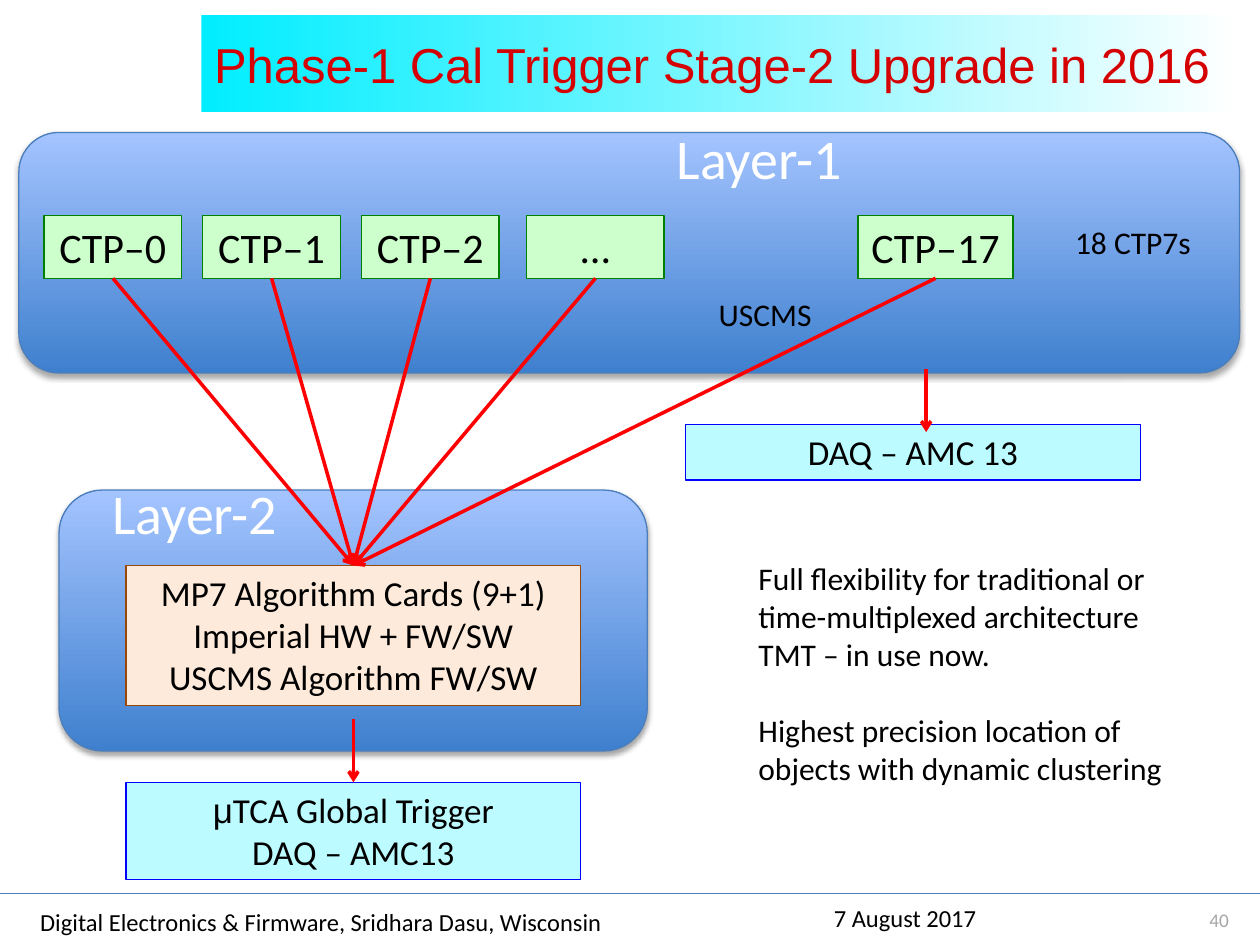
from dataclasses import dataclass

from lxml.etree import SubElement
from pptx import Presentation
from pptx.dml.color import RGBColor
from pptx.enum.shapes import MSO_CONNECTOR as Connector, MSO_SHAPE as Shape
from pptx.enum.text import MSO_ANCHOR as Anchor, PP_ALIGN as Align
from pptx.oxml.ns import qn
from pptx.util import Cm, Pt

TOP, BOTTOM = 0, 2


@dataclass(frozen=True)
class Theme:
    font: str = "Calibri"
    title_font: str = "Arial"
    text: str = "000000"
    white: str = "FFFFFF"
    muted: str = "A6A6A6"
    title: str = "D50001"
    title_gradient: tuple = ("00EEFF", "FFFFFF")
    panel_gradient: tuple = ("3F80CE", "A4C4FF")
    panel_line: str = "4B7EBC"
    rule: str = "4F81BD"
    arrow: str = "FE0001"
    # Box styles: fill, line
    card: tuple = ("CCFFCC", "008000")
    algorithm: tuple = ("FDEADA", "984807")
    output: tuple = ("BCFBFF", "0000FF")
    title_size: int = 28
    layer_size: int = 32
    card_size: int = 24
    box_size: int = 20
    note_size: int = 18
    footer_size: int = 14
    number_size: int = 11


def color(value):
    return RGBColor.from_string(value)


class SlideBuilder:
    def __init__(self, slide, theme):
        self.slide = slide
        self.theme = theme

    def add_text(self, frame, lines, size, ink=None, font=None,
                 align=Align.LEFT, anchor=Anchor.TOP, gaps=None):
        """Each line is a string or a list of (text, font) runs."""
        frame.word_wrap = True
        frame.vertical_anchor = anchor
        for index, line in enumerate(lines):
            paragraph = frame.paragraphs[0] if index == 0 else frame.add_paragraph()
            paragraph.alignment = align
            if gaps and index in gaps:
                paragraph.space_before = Pt(gaps[index])
            runs = [(line, font)] if isinstance(line, str) else line
            for text, run_font in runs:
                run = paragraph.add_run()
                run.text = text
                run.font.name = run_font or self.theme.font
                run.font.size = Pt(size)
                run.font.color.rgb = color(ink or self.theme.text)

    def gradient(self, shape, colors, angle):
        shape.fill.gradient()
        shape.fill.gradient_angle = angle
        for stop, value in zip(shape.fill.gradient_stops, colors):
            stop.color.rgb = color(value)

    def title(self, text, left, top, width, height):
        shape = self.slide.shapes.title
        shape.left, shape.top = Cm(left), Cm(top)
        shape.width, shape.height = Cm(width), Cm(height)
        self.gradient(shape, self.theme.title_gradient, 0)
        self.add_text(shape.text_frame, [text], self.theme.title_size,
                      self.theme.title, self.theme.title_font, anchor=Anchor.MIDDLE)

    def shape(self, kind, line, left, top, width, height):
        shape = self.slide.shapes.add_shape(
            kind, Cm(left), Cm(top), Cm(width), Cm(height))
        shape.shadow.inherit = False
        shape.line.color.rgb = color(line)
        shape.line.width = Pt(0.75)
        return shape

    def panel(self, *place):
        panel = self.shape(Shape.ROUNDED_RECTANGLE, self.theme.panel_line, *place)
        self.gradient(panel, self.theme.panel_gradient, 90)
        effects = panel.element.spPr.find(qn("a:effectLst"))
        shadow = SubElement(effects, qn("a:outerShdw"), blurRad="40000",
                            dist="23000", dir="5400000", rotWithShape="0")
        ink = SubElement(shadow, qn("a:srgbClr"), val="000000")
        SubElement(ink, qn("a:alpha"), val="35000")

    def box(self, lines, style, size, *place):
        fill, line = style
        box = self.shape(Shape.RECTANGLE, line, *place)
        box.fill.solid()
        box.fill.fore_color.rgb = color(fill)
        self.add_text(box.text_frame, lines, size, align=Align.CENTER)
        return box

    def label(self, lines, size, left, top, width, height, **style):
        label = self.slide.shapes.add_textbox(
            Cm(left), Cm(top), Cm(width), Cm(height))
        self.add_text(label.text_frame, lines, size, **style)
        return label

    def line(self, start, end, ink, width):
        line = self.slide.shapes.add_connector(
            Connector.STRAIGHT, *(Cm(value) for value in (*start, *end)))
        line.line.color.rgb = color(ink)
        line.line.width = Pt(width)
        SubElement(line.element.spPr, qn("a:effectLst"))
        return line

    def arrow(self, start=(0, 0), end=(0, 0), source=None, target=None):
        arrow = self.line(start, end, self.theme.arrow, 2)
        if source is not None:
            arrow.begin_connect(source, BOTTOM)
        if target is not None:
            arrow.end_connect(target, TOP)
        SubElement(arrow.element.spPr.find(qn("a:ln")), qn("a:tailEnd"), type="arrow")


def main():
    presentation = Presentation()
    presentation.slide_width, presentation.slide_height = Cm(25.4), Cm(19.05)
    slide = presentation.slides.add_slide(presentation.slide_layouts[5])
    theme = Theme()
    builder = SlideBuilder(slide, theme)

    # Title and footer
    builder.title("Phase-1 Cal Trigger Stage-2 Upgrade in 2016", 4.06, 0.3, 20.96, 1.96)
    builder.line((0, 18.01), (25.4, 18.01), theme.rule, 0.25)
    builder.label(["Digital Electronics & Firmware, Sridhara Dasu, Wisconsin"],
                  theme.footer_size, 0.56, 18.16, 15.9, 0.76)
    builder.label(["7 August 2017"], theme.footer_size, 16.56, 18.08, 7.19, 1.09)
    number = builder.label(["40"], theme.number_size, 23.75, 18.03, 1.65, 1.02,
                           ink=theme.muted, align=Align.CENTER, anchor=Anchor.MIDDLE)
    number.text_frame.margin_left = number.text_frame.margin_right = 0

    # Layer panels
    builder.panel(0.38, 2.67, 24.61, 4.85)
    builder.panel(1.19, 9.88, 11.86, 5.26)
    for name, left, top in (("Layer-1", 13.39, 2.36), ("Layer-2", 2.01, 9.53)):
        builder.label([name], theme.layer_size, left, top, 4.09, 1.63, ink=theme.white)

    # Layer-2 processing and outputs
    column, box_width = 2.54, 9.17
    algorithm = builder.box(
        ["MP7 Algorithm Cards (9+1)", "Imperial HW + FW/SW", "USCMS Algorithm FW/SW"],
        theme.algorithm, theme.box_size, column, 11.4, box_width, 2.82)
    global_trigger = builder.box(
        [[("μ", theme.title_font), ("TCA Global Trigger", theme.font)], "DAQ – AMC13"],
        theme.output, theme.box_size, column, 15.77, box_width, 1.96)
    builder.box(["DAQ – AMC 13"], theme.output, theme.box_size,
                13.82, 8.56, box_width, 1.12)
    builder.arrow(start=(column + box_width / 2, 14.5), target=global_trigger)
    builder.arrow(start=(18.67, 7.44), end=(18.67, 8.71))

    # Layer-1 cards, all feeding the algorithm cards
    cards = (("CTP–0", 0.89, 2.77), ("CTP–1", 4.09, 2.77), ("CTP–2", 7.29, 2.77),
             ("…", 10.62, 2.77), ("CTP–17", 17.3, 3.12))
    for name, left, width in cards:
        card = builder.box([name], theme.card, theme.card_size, left, 4.34, width, 1.27)
        builder.arrow(source=card, target=algorithm)

    # Annotations
    builder.label(["18 CTP7s"], theme.note_size, 21.01, 4.37, 3.66, 1.02,
                  align=Align.CENTER)
    owner = builder.label(["USCMS"], theme.note_size, 14.22, 5.82, 2.41, 1.02,
                          align=Align.CENTER)
    owner.text_frame.word_wrap = False
    builder.label(["Full flexibility for traditional or time-multiplexed architecture",
                   "TMT – in use now.",
                   "Highest precision location of objects with dynamic clustering"],
                  theme.note_size, 15.04, 11.15, 8.71, 4.88, gaps={2: 22})

    presentation.save("out.pptx")


if __name__ == "__main__":
    main()
